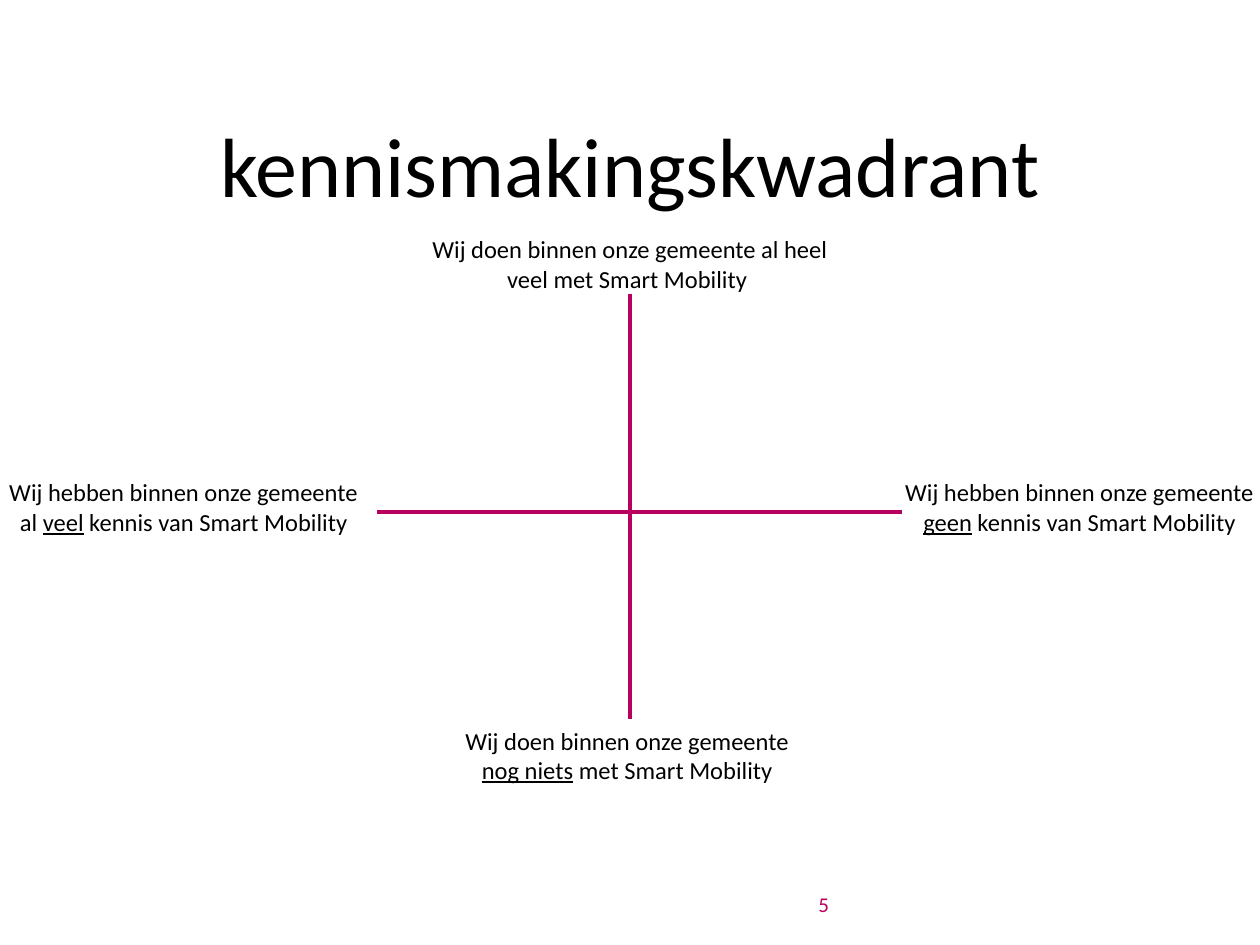
"""Build the introduction quadrant slide with two axes and four statements."""
from dataclasses import dataclass

import pptx
import pptx.dml.color
import pptx.enum.shapes
import pptx.enum.text
import pptx.oxml
import pptx.oxml.ns
import pptx.util
from pptx.util import Inches

ALIGN = pptx.enum.text.PP_ALIGN
ANCHOR = pptx.enum.text.MSO_ANCHOR
FONT = "Calibri"
BLACK = "000000"
MAGENTA = "B9005F"
LABEL_WIDTH, LABEL_HEIGHT = 3.48, 0.57


@dataclass(frozen=True)
class Run:
    text: str
    underline: bool = False


@dataclass(frozen=True)
class Statement:
    left: float
    top: float
    lines: tuple[tuple[Run, ...], ...]


@dataclass(frozen=True)
class Axis:
    start: tuple[float, float]
    end: tuple[float, float]


KNOWLEDGE = Run("Wij hebben binnen onze gemeente ")
KNOWLEDGE_END = Run(" kennis van Smart Mobility ")
RIGHT = Statement(6.85, 3.74, ((KNOWLEDGE,), (Run("geen", True), KNOWLEDGE_END)))
BOTTOM = Statement(3.26, 5.71, (
    (Run("Wij doen binnen onze gemeente "),),
    (Run("nog niets", True), Run(" met Smart Mobility ")),
))
LEFT = Statement(-0.26, 3.74, (
    (KNOWLEDGE,),
    (Run("al "), Run("veel", True), KNOWLEDGE_END),
))
TOP = Statement(3.26, 1.81, (
    (Run("Wij doen binnen onze gemeente al heel veel met Smart Mobility "),),
))
VERTICAL = Axis((5, 2.33), (5, 5.71))
HORIZONTAL = Axis((7.16, 4.06), (2.99, 4.06))


def color(value: str) -> pptx.dml.color.RGBColor:
    """Turn a hex string into a colour."""
    return pptx.dml.color.RGBColor.from_string(value)


def add_text(slide, lines, left: float, top: float, width: float, height: float, *,
             size: float, fill: str = BLACK, align=ALIGN.CENTER, anchor=ANCHOR.TOP,
             margin: float = 0, wrap: bool = True, spacing: float = 1.0):
    """Add a text box with one paragraph for each line of runs."""
    shape = slide.shapes.add_textbox(Inches(left), Inches(top), Inches(width), Inches(height))
    frame = shape.text_frame
    frame.word_wrap = wrap
    frame.vertical_anchor = anchor
    frame.margin_left = frame.margin_right = Inches(margin)
    frame.margin_top = frame.margin_bottom = Inches(margin)
    for index, line in enumerate(lines):
        paragraph = frame.add_paragraph() if index else frame.paragraphs[0]
        paragraph.alignment = align
        paragraph.line_spacing = spacing
        for part in line:
            run = paragraph.add_run()
            run.text = part.text
            run.font.name = FONT
            run.font.size = pptx.util.Pt(size)
            run.font.color.rgb = color(fill)
            if part.underline:
                run.font.underline = True
    return shape


def add_statement(slide, statement: Statement):
    """Add the label at one end of an axis."""
    return add_text(slide, statement.lines, statement.left, statement.top,
                    LABEL_WIDTH, LABEL_HEIGHT, size=14, margin=0.05)


def add_axis(slide, axis: Axis):
    """Add a straight axis line without a shadow."""
    connector = slide.shapes.add_connector(
        pptx.enum.shapes.MSO_CONNECTOR.STRAIGHT,
        *(Inches(value) for value in axis.start + axis.end))
    connector.line.color.rgb = color(MAGENTA)
    connector.line.width = pptx.util.Pt(2.25)
    properties = connector.element.find(pptx.oxml.ns.qn("p:spPr"))
    properties.append(pptx.oxml.parse_xml(
        f"<a:effectLst {pptx.oxml.ns.nsdecls('a')}/>"))
    return connector


def main() -> None:
    """Build and save the slide."""
    presentation = pptx.Presentation()
    presentation.slide_width = Inches(10)
    presentation.slide_height = Inches(7.5)
    slide = presentation.slides.add_slide(presentation.slide_layouts[6])
    add_text(slide, ((Run("kennismakingskwadrant"),),), 0.51, 0.99, 8.98, 1.18,
             size=48, spacing=0.9)
    add_text(slide, ((Run("5"),),), 6.44, 7.08, 0.14, 0.19, size=12, fill=MAGENTA,
             align=ALIGN.RIGHT, anchor=ANCHOR.MIDDLE, wrap=False)
    vertical = add_axis(slide, VERTICAL)
    add_axis(slide, HORIZONTAL)
    add_statement(slide, RIGHT)
    vertical.end_connect(add_statement(slide, BOTTOM), 0)
    add_statement(slide, LEFT)
    add_statement(slide, TOP)
    presentation.save("out.pptx")


if __name__ == "__main__":
    main()
